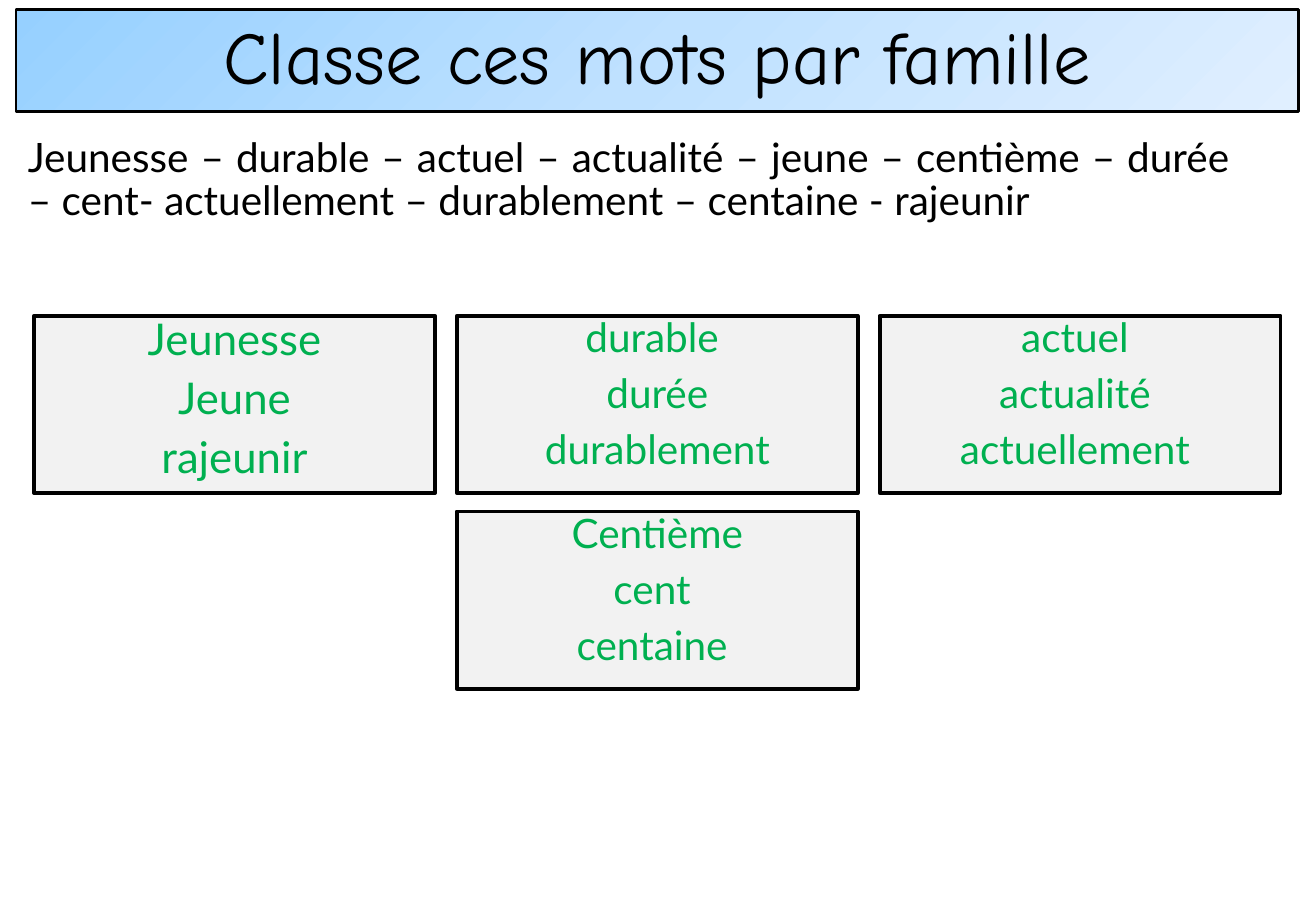
from copy import deepcopy
from dataclasses import dataclass

from pptx import Presentation
from pptx.dml.color import RGBColor
from pptx.enum.shapes import MSO_SHAPE as Shape
from pptx.enum.text import MSO_ANCHOR as Anchor, PP_ALIGN as Align
from pptx.util import Pt

COLORS = {
    "ink": "000000",
    "answer": "00B050",
    "card": "F2F2F2",
    "sky": "96D0FF",
    "pale sky": "BFE1FF",
    "mist": "E0EFFF",
}

# Card grid, in points
GRID_LEFT, GRID_TOP = 20.2, 187.2
CARD_WIDTH, CARD_HEIGHT = 237.6, 105.1
COLUMN_STEP, ROW_STEP = 250.6, 116


@dataclass
class Family:
    column: int
    row: int
    words: list[str]
    size: float = 24


FAMILIES = [
    Family(0, 0, ["Jeunesse", "Jeune", "rajeunir"], size=25.9),
    Family(1, 0, ["durable ", "durée", "durablement"]),
    Family(2, 0, ["actuel ", "actualité ", "actuellement "]),
    Family(1, 1, ["Centième", "cent ", "centaine "]),
]


def color(name: str) -> RGBColor:
    return RGBColor.from_string(COLORS[name])


def write(box, lines: list[str], *, size: float, font: str = "Lato",
          ink: str = "ink", align=Align.CENTER, anchor=Anchor.TOP,
          spacing: float = 0.9, before: float = 0) -> None:
    frame = box.text_frame
    frame.word_wrap = True
    frame.vertical_anchor = anchor
    for index, line in enumerate(lines):
        para = frame.add_paragraph() if index else frame.paragraphs[0]
        para.alignment = align
        para.line_spacing = spacing
        para.space_before = Pt(before)
        span = para.add_run()
        span.text = line
        span.font.name = font
        span.font.size = Pt(size)
        span.font.color.rgb = color(ink)


def add_box(page, left: float, top: float, width: float, height: float,
            border: float):
    box = page.shapes.add_shape(
        Shape.RECTANGLE, Pt(left), Pt(top), Pt(width), Pt(height))
    box.shadow.inherit = False
    box.line.color.rgb = color("ink")
    box.line.width = Pt(border)
    return box


def fill_gradient(box, names: list[str]) -> None:
    box.fill.gradient()
    box.fill.gradient_angle = 315
    first = box.fill.gradient_stops[0]._gs
    for _ in names[2:]:
        first.addnext(deepcopy(first))
    for index, (stop, name) in enumerate(zip(box.fill.gradient_stops, names)):
        stop.position = index / (len(names) - 1)
        stop.color.rgb = color(name)


def add_family(page, family: Family) -> None:
    card = add_box(page, GRID_LEFT + family.column * COLUMN_STEP,
                   GRID_TOP + family.row * ROW_STEP,
                   CARD_WIDTH, CARD_HEIGHT, border=2.25)
    card.fill.solid()
    card.fill.fore_color.rgb = color("card")
    write(card, family.words, size=family.size, ink="answer",
          spacing=0.8, before=10)


def main() -> None:
    deck = Presentation()
    deck.slide_width, deck.slide_height = Pt(780), Pt(540)
    page = deck.slides.add_slide(deck.slide_layouts[6])

    # Words to sort
    word_list = page.shapes.add_textbox(Pt(9.4), Pt(77.8), Pt(726.5), Pt(92.9))
    write(word_list, [
        "Jeunesse – durable – actuel – actualité – jeune – centième – durée "
        "– cent- actuellement – durablement – centaine - rajeunir"
    ], size=24, align=Align.JUSTIFY, before=10)

    # Title banner
    banner = add_box(page, 9.4, 5.8, 760.3, 60.5, border=1.5)
    fill_gradient(banner, ["sky", "pale sky", "mist"])
    write(banner, ["Classe ces mots par famille"], size=44,
          font="Comic Neue", anchor=Anchor.MIDDLE)

    # Word families
    for family in FAMILIES:
        add_family(page, family)

    deck.save("out.pptx")


if __name__ == "__main__":
    main()
